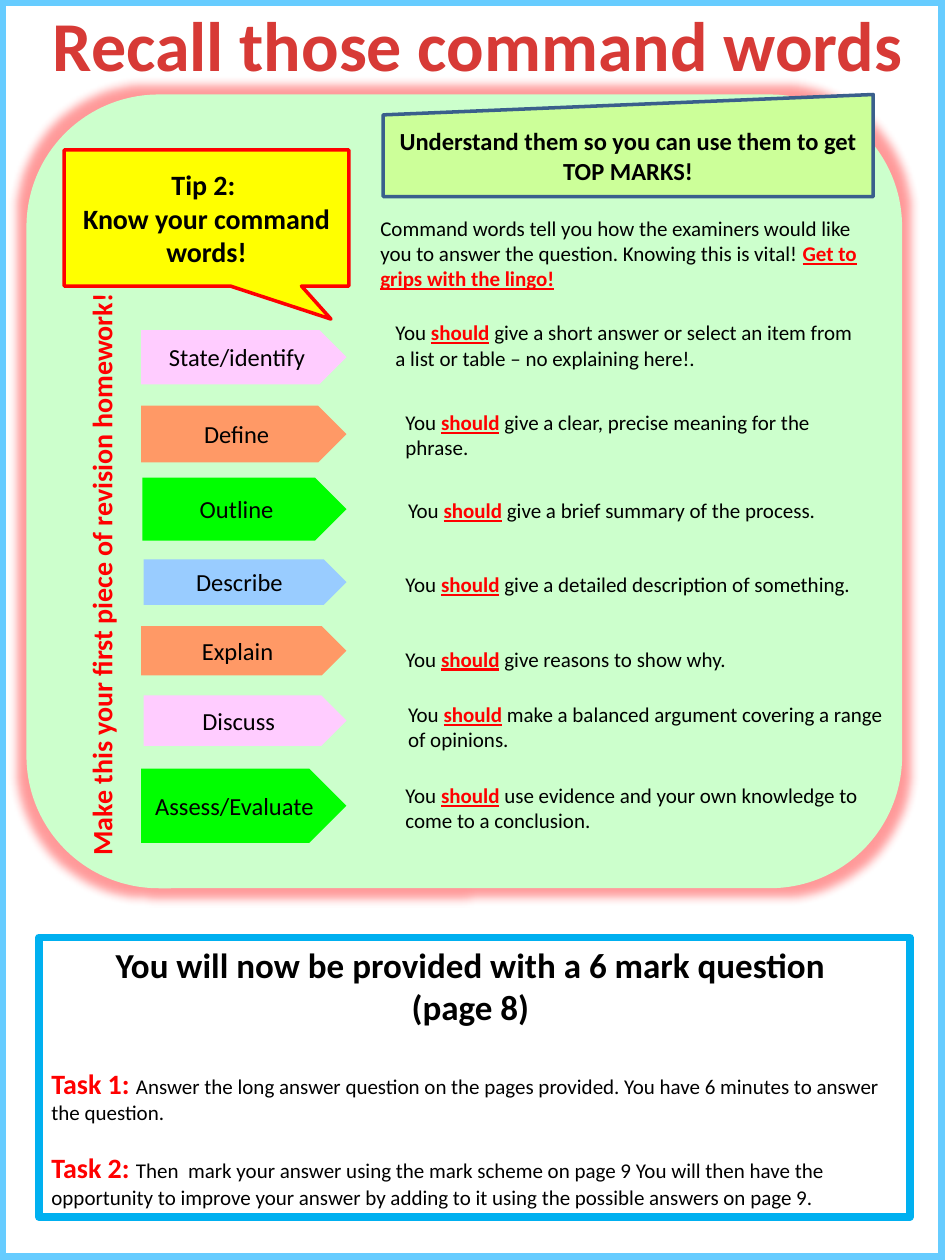
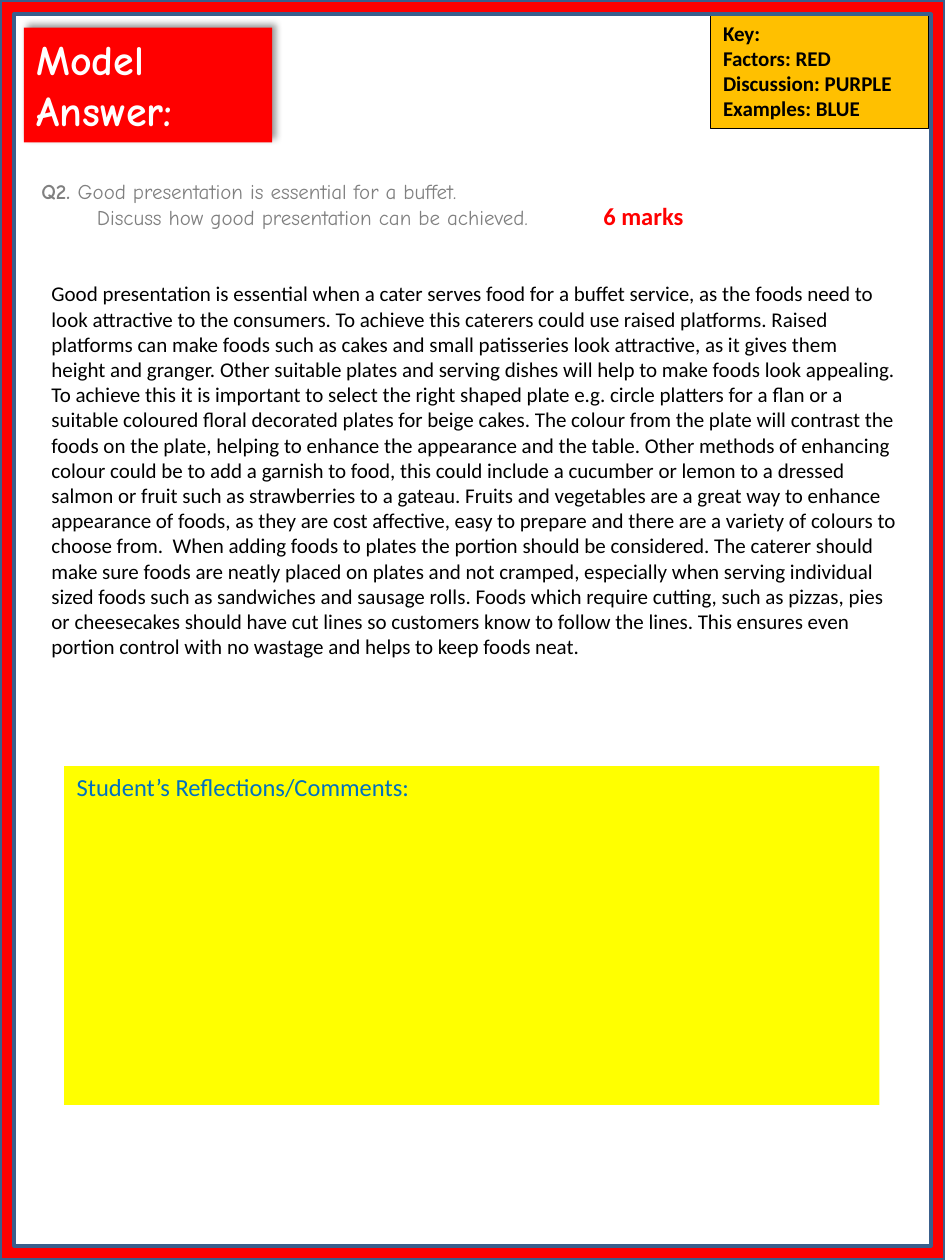
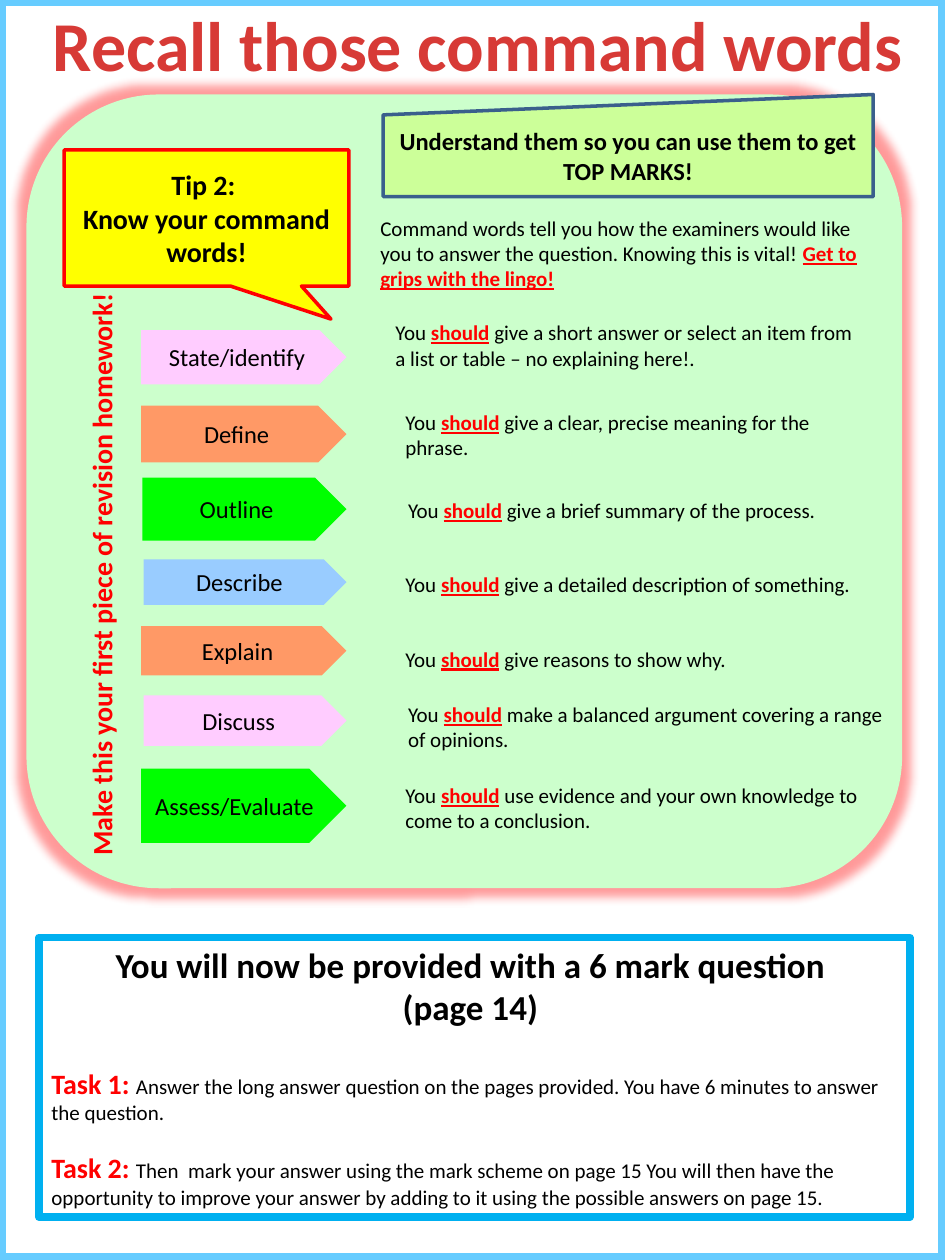
"""Build a revision booklet: command-word pages around a model answer."""
from dataclasses import dataclass

import lxml.etree
import pptx
import pptx.dml.color
import pptx.enum.shapes
import pptx.enum.text
import pptx.oxml.ns
import pptx.util

Inches = pptx.util.Inches
Pt = pptx.util.Pt
RGBColor = pptx.dml.color.RGBColor
Shape = pptx.enum.shapes.MSO_SHAPE
Anchor = pptx.enum.text.MSO_ANCHOR
Align = pptx.enum.text.PP_ALIGN

BLACK = RGBColor(0x00, 0x00, 0x00)
WHITE = RGBColor(0xFF, 0xFF, 0xFF)
RED = RGBColor(0xFF, 0x00, 0x00)
TITLE_RED = RGBColor(0xD7, 0x3A, 0x36)
YELLOW = RGBColor(0xFF, 0xFF, 0x00)
AMBER = RGBColor(0xFF, 0xC0, 0x00)
MINT = RGBColor(0xCC, 0xFF, 0xCC)
LIME = RGBColor(0xCC, 0xFF, 0x99)
GREEN = RGBColor(0x00, 0xFF, 0x00)
PINK = RGBColor(0xFF, 0xCC, 0xFF)
ORANGE = RGBColor(0xFF, 0x99, 0x66)
PALE_BLUE = RGBColor(0x99, 0xCC, 0xFF)
SKY = RGBColor(0x66, 0xCC, 0xFF)
BRIGHT_BLUE = RGBColor(0x00, 0xB0, 0xF0)
TEXT_BLUE = RGBColor(0x00, 0x70, 0xC0)
NAVY = RGBColor(0x3A, 0x5F, 0x8C)
GREY = RGBColor(0x80, 0x80, 0x80)

BODY_FONT = "Calibri"
COMIC_FONT = "Comic Neue"
PAGE_WIDTH, PAGE_HEIGHT = 7.5, 10


@dataclass(frozen=True)
class Box:
    """A place on the page, in inches."""
    left: float
    top: float
    width: float
    height: float

    def lengths(self) -> tuple:
        """Return the four values as lengths."""
        return tuple(map(Inches, (self.left, self.top, self.width, self.height)))


@dataclass(frozen=True)
class Span:
    """Words that depart from the style of their paragraph."""
    text: str
    size: float | None = None
    color: RGBColor | None = None
    bold: bool | None = None
    underline: bool | None = None


@dataclass(frozen=True)
class Para:
    """A paragraph with its shared style."""
    spans: tuple[Span, ...]
    size: float = 12
    color: RGBColor = BLACK
    bold: bool | None = None
    font: str = BODY_FONT
    align: Align = Align.LEFT
    before: float = 0
    indent: float = 0


@dataclass(frozen=True)
class Command:
    """A command word, its arrow and what it asks for."""
    word: str
    color: RGBColor
    arrow: Box
    meaning: str
    meaning_box: Box


COMMANDS = (
    Command("State/identify", PINK, Box(1.12, 2.62, 1.63, 0.43),
            "give a short answer or select an item from a list or table – no explaining here!.",
            Box(3.04, 2.49, 3.83, 0.47)),
    Command("Define", ORANGE, Box(1.12, 3.22, 1.63, 0.45),
            "give a clear, precise meaning for the phrase.", Box(3.12, 3.2, 3.66, 0.47)),
    Command("Outline", GREEN, Box(1.13, 3.79, 1.62, 0.5),
            "give a brief summary of the process.", Box(3.14, 3.9, 3.84, 0.28)),
    Command("Describe", PALE_BLUE, Box(1.14, 4.44, 1.61, 0.36),
            "give a detailed description of something.", Box(3.12, 4.49, 4.06, 0.28)),
    Command("Explain", ORANGE, Box(1.12, 4.97, 1.63, 0.39),
            "give reasons to show why.", Box(3.12, 5.08, 4.06, 0.28)),
    Command("Discuss", PINK, Box(1.14, 5.52, 1.61, 0.4),
            "make a balanced argument covering a range of opinions.",
            Box(3.14, 5.52, 4.06, 0.47)),
    Command("Assess/Evaluate", GREEN, Box(1.12, 6.1, 1.63, 0.59),
            "use evidence and your own knowledge to come to a conclusion.",
            Box(3.12, 6.16, 4.06, 0.47)),
)

MODEL_ANSWER = (
    "Good presentation is essential when a cater serves food for a buffet service, as the "
    "foods need to look attractive to the consumers. To achieve this caterers could use raised "
    "platforms. Raised platforms can make foods such as cakes and small patisseries look "
    "attractive, as it gives them height and granger.",
    "Other suitable plates and serving dishes "
    "will help to make foods look appealing. To achieve this it is important to select the right "
    "shaped plate e.g. circle platters for a flan or a suitable coloured floral decorated plates "
    "for beige cakes. The colour from the plate will contrast the foods on the plate, helping to "
    "enhance the appearance and the table.",
    "Other methods of enhancing colour could be to add a "
    "garnish to food, this could include a cucumber or lemon to a dressed salmon or fruit such "
    "as strawberries to a gateau. Fruits and vegetables are a great way to enhance appearance of "
    "foods, as they are cost affective, easy to prepare and there are a variety of colours to "
    "choose from. ",
    "When adding foods to plates the portion should be considered. The caterer "
    "should make sure foods are neatly placed on plates and not cramped, especially when serving "
    "individual sized foods such as sandwiches and sausage rolls. Foods which require cutting, "
    "such as pizzas, pies or cheesecakes should have cut lines so customers know to follow the "
    "lines. This ensures even portion control with no wastage and helps to keep foods neat.",
)


def line(text: str, **style) -> Para:
    """Return a paragraph in one style."""
    return Para((Span(text),), **style)


def write(shape, paras: tuple[Para, ...], anchor: Anchor = Anchor.TOP, wrap: bool = True) -> None:
    """Fill a shape with paragraphs."""
    frame = shape.text_frame
    frame.word_wrap = wrap
    frame.vertical_anchor = anchor
    for index, para in enumerate(paras):
        paragraph = frame.add_paragraph() if index else frame.paragraphs[0]
        paragraph.alignment = para.align
        paragraph.space_before = Pt(para.before)
        if para.indent:
            paragraph._p.get_or_add_pPr().set("marL", str(Inches(para.indent)))
        font = paragraph.font
        font.name, font.size, font.bold = para.font, Pt(para.size), para.bold
        font.color.rgb = para.color
        for span in para.spans:
            run = paragraph.add_run()
            run.text = span.text
            if span.size:
                run.font.size = Pt(span.size)
            if span.color is not None:
                run.font.color.rgb = span.color
            if span.bold is not None:
                run.font.bold = span.bold
            if span.underline is not None:
                run.font.underline = span.underline


def add_text(shapes, box: Box, *paras: Para, wrap: bool = True):
    """Add a text box."""
    text = shapes.add_textbox(*box.lengths())
    write(text, paras, wrap=wrap)
    return text


def add_panel(shapes, preset: Shape, box: Box, fill: RGBColor | None = None,
              outline: RGBColor | None = None, weight: float = 2, adjust: tuple = (),
              paras: tuple[Para, ...] = (), anchor: Anchor = Anchor.TOP):
    """Add a preset shape with its fill, outline and words."""
    panel = shapes.add_shape(preset, *box.lengths())
    panel.shadow.inherit = False
    if fill is None:
        panel.fill.background()
    else:
        panel.fill.solid()
        panel.fill.fore_color.rgb = fill
    if outline is None:
        panel.line.fill.background()
    else:
        panel.line.color.rgb = outline
        panel.line.width = Pt(weight)
    for index, value in enumerate(adjust):
        panel.adjustments[index] = value
    if paras:
        write(panel, paras, anchor)
    return panel


def add_effect(shape, tag: str, color: RGBColor, alpha: int, **attributes) -> None:
    """Give a shape a glow or a shadow."""
    qn = pptx.oxml.ns.qn
    effects = shape._element.spPr.find(qn("a:effectLst"))
    effect = lxml.etree.SubElement(effects, qn(tag), {k: str(v) for k, v in attributes.items()})
    tint = lxml.etree.SubElement(effect, qn("a:srgbClr"), val=str(color))
    lxml.etree.SubElement(tint, qn("a:alpha"), val=str(alpha * 1000))


def add_border(shapes, thickness: float, fill: RGBColor, outline: RGBColor) -> None:
    """Frame the whole page."""
    add_panel(shapes, Shape.FRAME, Box(0, 0, PAGE_WIDTH, PAGE_HEIGHT), fill, outline,
              adjust=(thickness,))


def add_command(shapes, command: Command) -> None:
    """Add the arrow of a command word and its meaning."""
    arrow = add_panel(shapes, Shape.PENTAGON, command.arrow, command.color,
                      paras=(line(command.word, size=14, align=Align.CENTER),),
                      anchor=Anchor.MIDDLE)
    arrow.text_frame.margin_left = arrow.text_frame.margin_right = Inches(0.05)
    add_text(shapes, command.meaning_box, Para((
        Span("You "), Span("should", color=RED, bold=True, underline=True),
        Span(f" {command.meaning}"))))


def task(number: int, text: str, before: float) -> Para:
    """Return a task paragraph with its red label."""
    return Para((Span(f"Task {number}: ", size=16, color=RED, bold=True), Span(text)),
                before=before)


def build_command_page(slide, question_page: int, mark_page: int) -> None:
    """Draw the command words and the tasks that follow."""
    words = slide.shapes.add_group_shape().shapes
    backdrop = add_panel(words, Shape.ROUNDED_RECTANGLE, Box(0.21, 0.75, 6.95, 6.3), MINT)
    add_effect(backdrop, "a:glow", RED, 40, rad=Pt(11))
    heading = {"size": 16, "bold": True, "align": Align.CENTER}
    add_panel(words, Shape.RECTANGULAR_CALLOUT, Box(0.51, 1.19, 2.26, 1.08), YELLOW, RED,
              adjust=(0.437, 0.743), anchor=Anchor.MIDDLE,
              paras=(line("Tip 2: ", **heading), line("Know your command words!", **heading)))
    add_text(words, Box(2.92, 1.66, 4.18, 0.66), Para((
        Span("Command words tell you how the examiners would like you to answer the question. "
             "Knowing this is vital! "),
        Span("Get to grips with the lingo!", color=RED, bold=True, underline=True))))
    add_panel(words, Shape.FLOWCHART_MANUAL_INPUT, Box(3.04, 0.75, 3.89, 0.81), LIME, NAVY,
              anchor=Anchor.MIDDLE,
              paras=(line("Understand them so you can use them to get TOP MARKS!",
                          size=14, bold=True, align=Align.CENTER),))
    reminder = add_text(words, Box(-1.77, 4.38, 5.14, 0.36),
                        line("Make this your first piece of revision homework!",
                             color=RED, **heading))
    reminder.rotation = 270
    for command in COMMANDS:
        add_command(words, command)

    add_border(slide.shapes, 0.005, SKY, SKY)
    notice = {"size": 20, "bold": True, "align": Align.CENTER}
    add_panel(slide.shapes, Shape.RECTANGLE, Box(0.31, 7.44, 6.91, 2.22), None, BRIGHT_BLUE, 4.5,
              paras=(
                  line("You will now be provided with a 6 mark question ", **notice),
                  line(f"(page {question_page}) ", **notice),
                  task(1, "Answer the long answer question on the pages provided. You have "
                          "6 minutes to answer the question.", 22),
                  task(2, f"Then  mark your answer using the mark scheme on page {mark_page} You "
                          "will then have the opportunity to improve your answer by adding to it "
                          f"using the possible answers on page {mark_page}.", 14.6)))
    add_text(slide.shapes, Box(0.28, -0.04, 7.02, 0.77),
             line("Recall those command words", size=40, color=TITLE_RED, bold=True,
                  align=Align.CENTER), wrap=False)


def build_answer_page(slide) -> None:
    """Draw the question, its model answer and space for comments."""
    shapes = slide.shapes
    banner = add_panel(shapes, Shape.RECTANGLE, Box(0.19, 0.22, 1.97, 0.91), RED,
                       paras=(line("Model Answer:", size=24, color=WHITE, bold=True,
                                   font=COMIC_FONT),))
    add_effect(banner, "a:outerShdw", BLACK, 40, blurRad=Pt(4), dist=Pt(3), dir=315 * 60000)
    key = ("Key:", "Factors: RED", "Discussion: PURPLE", "Examples: BLUE")
    add_panel(shapes, Shape.RECTANGLE, Box(5.64, 0.11, 1.73, 0.91), AMBER, BLACK, 0.75,
              paras=tuple(line(entry, bold=True) for entry in key))
    add_border(shapes, 0.015, RED, NAVY)
    add_panel(shapes, Shape.RECTANGLE, Box(0.51, 6.08, 6.47, 2.69), YELLOW,
              paras=(line("Student’s Reflections/Comments:", size=14, color=TEXT_BLUE),))
    question = {"color": GREY, "font": COMIC_FONT}
    add_text(shapes, Box(0.23, 1.37, 6.65, 0.91),
             Para((Span("Q2. ", bold=True), Span("Good presentation is essential for a buffet.")),
                  **question),
             line("Discuss how good presentation can be achieved.", indent=0.44, **question))
    add_text(shapes, Box(4.69, 1.55, 0.84, 0.34),
             line("6 marks", size=14, color=RED, bold=True), wrap=False)
    add_text(shapes, Box(0.31, 2.18, 6.91, 3.13), line(" ".join(MODEL_ANSWER)))


def main() -> None:
    """Build and save the three pages."""
    deck = pptx.Presentation()
    deck.slide_width, deck.slide_height = Inches(PAGE_WIDTH), Inches(PAGE_HEIGHT)
    blank = deck.slide_layouts[6]
    build_command_page(deck.slides.add_slide(blank), 8, 9)
    build_answer_page(deck.slides.add_slide(blank))
    build_command_page(deck.slides.add_slide(blank), 14, 15)
    deck.save("out.pptx")


if __name__ == "__main__":
    main()
